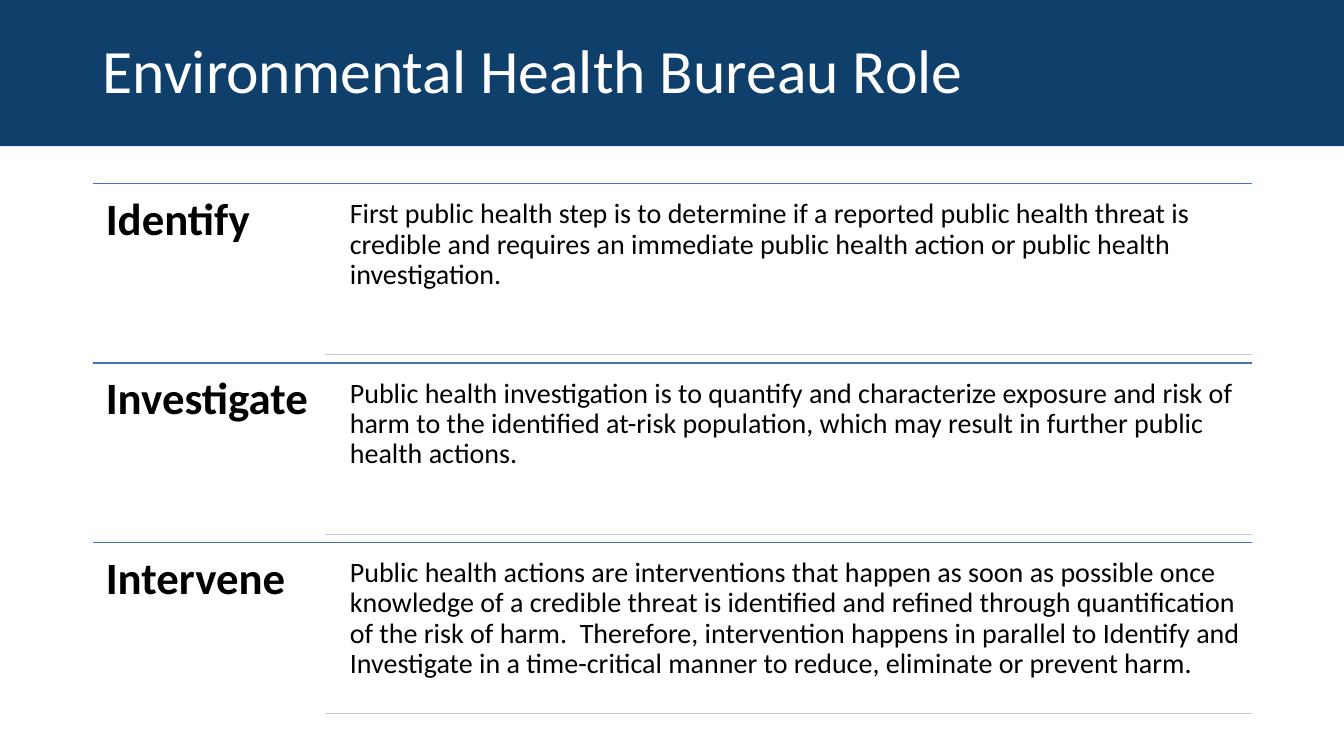
"""Build the Environmental Health Bureau Role slide."""
from lxml.etree import SubElement
from pptx import Presentation
from pptx.dml.color import RGBColor
from pptx.enum.shapes import MSO_CONNECTOR, MSO_SHAPE
from pptx.enum.text import MSO_ANCHOR
from pptx.oxml.ns import qn
from pptx.util import Inches, Pt

TITLE = "Environmental Health Bureau Role"
ROLES = [
    ("Identify",
     "First public health step is to determine if a reported public health threat is "
     "credible and requires an immediate public health action or public health "
     "investigation."),
    ("Investigate",
     "Public health investigation is to quantify and characterize exposure and risk of "
     "harm to the identified at-risk population, which may result in further public "
     "health actions."),
    ("Intervene",
     "Public health actions are interventions that happen as soon as possible once "
     "knowledge of a credible threat is identified and refined through quantification "
     "of the risk of harm.  Therefore, intervention happens in parallel to Identify and "
     "Investigate in a time-critical manner to reduce, eliminate or prevent harm."),
]
COLORS = {"band": "0F406B", "title": "FFFFFF", "text": "000000",
          "rule": "4472C4", "subrule": "C1C9E4"}
SLIDE_WIDTH, SLIDE_HEIGHT, BAND_HEIGHT = 13.33, 7.5, 1.45
LEFT, RIGHT = 0.92, 12.42
ROWS_TOP, ROW_HEIGHT = 1.82, 1.78
HEADING_WIDTH, DETAIL_LEFT = 2.3, 3.39
DETAIL_OFFSET, DETAIL_HEIGHT = 0.08, 1.62


def add_text(page, text, left, top, width, height, size, color, inset,
             bold=False, anchor=MSO_ANCHOR.TOP):
    box = page.shapes.add_textbox(Inches(left), Inches(top), Inches(width), Inches(height))
    frame = box.text_frame
    frame.word_wrap = True
    frame.vertical_anchor = anchor
    frame.margin_left = frame.margin_right = Inches(inset)
    frame.margin_top = frame.margin_bottom = Inches(inset)
    para = frame.paragraphs[0]
    para.text = text
    para.line_spacing = 0.9
    para.font.name = "Calibri"
    para.font.size = Pt(size)
    para.font.bold = bold
    para.font.color.rgb = RGBColor.from_string(COLORS[color])


def add_rule(page, left, top, color):
    rule = page.shapes.add_connector(
        MSO_CONNECTOR.STRAIGHT, Inches(left), Inches(top), Inches(RIGHT), Inches(top))
    rule.line.color.rgb = RGBColor.from_string(COLORS[color])
    rule.line.width = Pt(1)
    SubElement(rule.element.spPr, qn("a:effectLst"))


def add_band(page):
    band = page.shapes.add_shape(
        MSO_SHAPE.RECTANGLE, 0, 0, Inches(SLIDE_WIDTH), Inches(BAND_HEIGHT))
    band.shadow.inherit = False
    band.fill.solid()
    band.fill.fore_color.rgb = RGBColor.from_string(COLORS["band"])
    band.line.fill.background()


def main():
    deck = Presentation()
    deck.slide_width, deck.slide_height = Inches(SLIDE_WIDTH), Inches(SLIDE_HEIGHT)
    page = deck.slides.add_slide(deck.slide_layouts[6])
    add_band(page)
    add_text(page, TITLE, LEFT, 0, 9.88, BAND_HEIGHT, 44, "title", 0.1,
             anchor=MSO_ANCHOR.MIDDLE)
    for index, (heading, detail) in enumerate(ROLES):
        top = ROWS_TOP + index * ROW_HEIGHT
        detail_top = top + DETAIL_OFFSET
        add_rule(page, LEFT, top, "rule")
        add_text(page, heading, LEFT, top, HEADING_WIDTH, ROW_HEIGHT, 32, "text", 0.13,
                 bold=True)
        add_text(page, detail, DETAIL_LEFT, detail_top, RIGHT - DETAIL_LEFT, DETAIL_HEIGHT,
                 20, "text", 0.08)
        add_rule(page, LEFT + HEADING_WIDTH, detail_top + DETAIL_HEIGHT, "subrule")
    deck.save("out.pptx")


if __name__ == "__main__":
    main()
